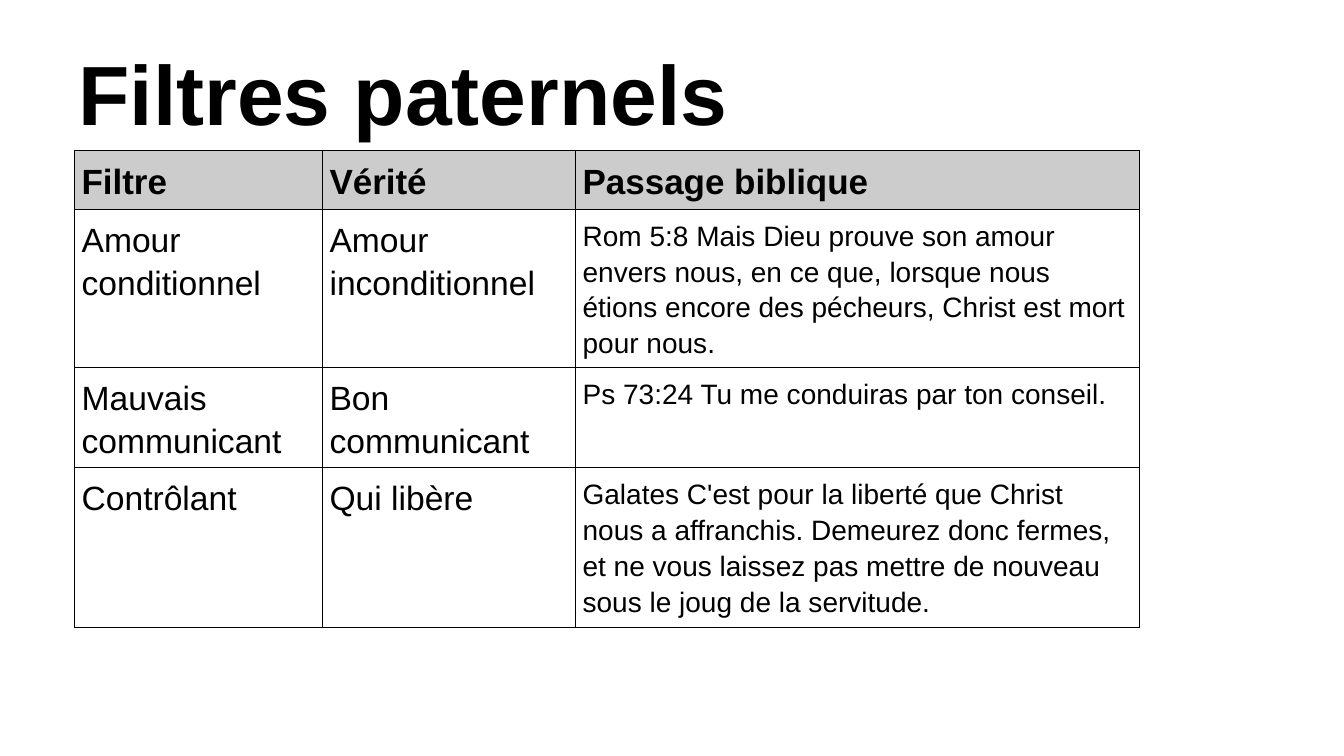
from lxml.etree import SubElement as Sub
from pptx import Presentation
from pptx.dml.color import RGBColor
from pptx.enum.text import MSO_ANCHOR as Anchor, MSO_AUTO_SIZE as Auto, PP_ALIGN as Align
from pptx.oxml.ns import qn
from pptx.util import Inches, Pt

BLACK = RGBColor(0x00, 0x00, 0x00)
GRAY = RGBColor(0xCC, 0xCC, 0xCC)
WIDE, HIGH = 13.33, 7.5
GRID = 100

HEAD = ["Filtre", "Vérité", "Passage biblique"]
ROWS = [
    ["Amour conditionnel", "Amour inconditionnel",
     "Rom 5:8 Mais Dieu prouve son amour envers nous, en ce que, lorsque nous "
     "étions encore des pécheurs, Christ est mort pour nous."],
    ["Mauvais communicant", "Bon communicant",
     "Ps 73:24 Tu me conduiras par ton conseil."],
    ["Contrôlant", "Qui libère",
     "Galates C'est pour la liberté que Christ nous a affranchis. Demeurez donc "
     "fermes, et ne vous laissez pas mettre de nouveau sous le joug de la servitude."],
]


class Page:
    face = "Arial"
    ink = BLACK
    pad = Inches(0.07)
    line = Pt(0.75)

    def __init__(self, deck):
        self.slide = deck.slides.add_slide(deck.slide_layouts[5])

    def col(self, n):
        return Inches(n * WIDE / GRID)

    def row(self, n):
        return Inches(n * HIGH / GRID)

    def style(self, para, size, bold, lead):
        para.alignment = Align.LEFT
        para.line_spacing = lead
        font = para.font
        font.name, font.size, font.bold = self.face, Pt(size), bold
        font.color.rgb = self.ink

    def title(self, text, x, y, w, h):
        box = self.slide.shapes.title
        box.left, box.top = self.col(x), self.row(y)
        box.width, box.height = self.col(w), self.row(h)
        frame = box.text_frame
        frame.text = text
        frame.auto_size = Auto.NONE
        frame.word_wrap = True
        frame.vertical_anchor = Anchor.MIDDLE
        self.style(frame.paragraphs[0], 60, True, 0.9)

    def border(self, cell):
        props = cell._tc.get_or_add_tcPr()
        for side in ("lnL", "lnR", "lnT", "lnB"):
            edge = Sub(props, qn(f"a:{side}"), w=str(self.line))
            fill = Sub(edge, qn("a:solidFill"))
            Sub(fill, qn("a:srgbClr"), val=str(self.ink))

    def cell(self, cell, text, size, head):
        cell.text = text
        cell.margin_left = cell.margin_right = self.pad
        cell.margin_top = cell.margin_bottom = self.pad
        self.style(cell.text_frame.paragraphs[0], size, head, 1.15)
        self.border(cell)
        if head:
            cell.fill.solid()
            cell.fill.fore_color.rgb = GRAY
        else:
            cell.fill.background()

    def table(self, data, x, y, cols, rows):
        table = self.slide.shapes.add_table(
            len(rows), len(cols), self.col(x), self.row(y),
            self.col(sum(cols)), self.row(sum(rows))).table
        table.first_row = table.horz_banding = False
        for part, n in zip(table.columns, cols):
            part.width = self.col(n)
        for part, n in zip(table.rows, rows):
            part.height = self.row(n)
        for r, texts in enumerate(data):
            for c, text in enumerate(texts):
                size = 25 if r == 0 else 20 if c == 2 else 24
                self.cell(table.cell(r, c), text, size, r == 0)


def main():
    deck = Presentation()
    deck.slide_width, deck.slide_height = Inches(WIDE), Inches(HIGH)
    page = Page(deck)
    page.title("Filtres paternels", 5.1, 3.33, 86.25, 19.33)
    page.table([HEAD, *ROWS], 5.55, 19.87,
               [18.45, 18.83, 41.93], [7.73, 20.93, 13.2, 21.2])
    deck.save("out.pptx")


if __name__ == "__main__":
    main()
